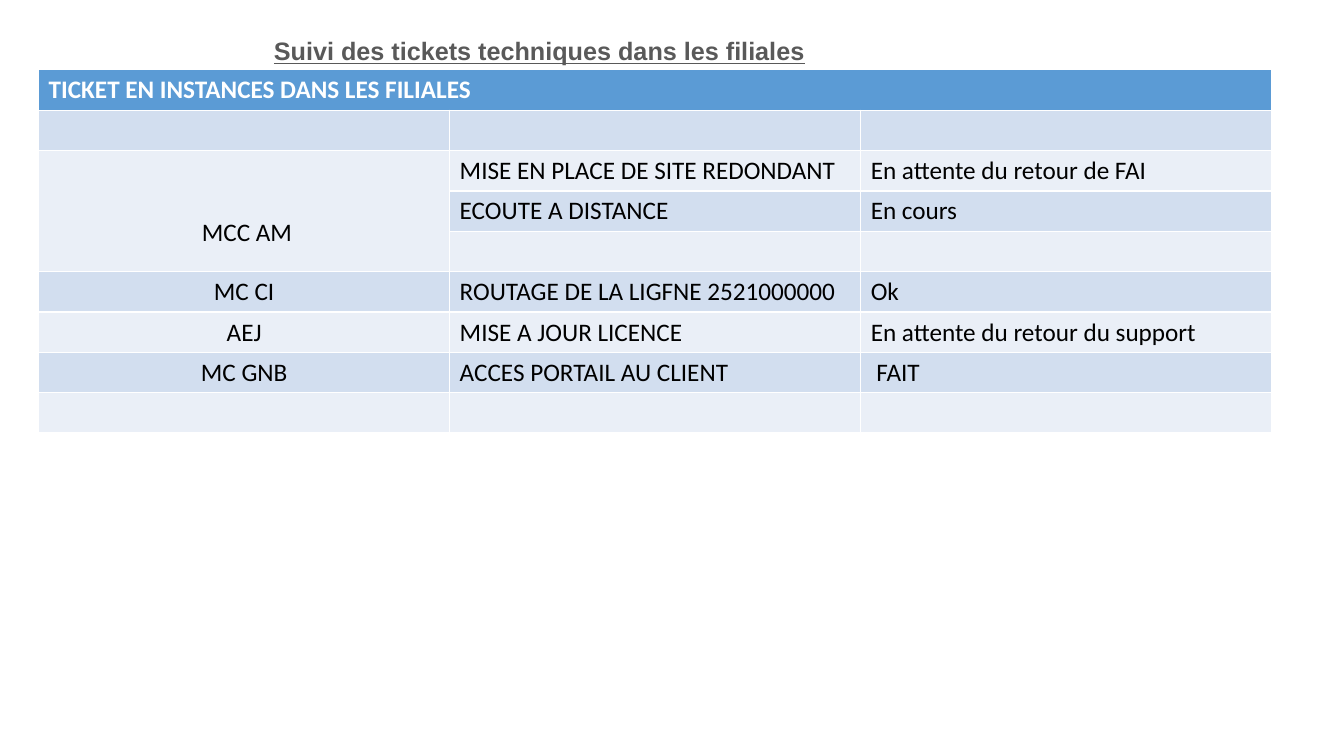
from pptx import Presentation
from pptx.dml.color import RGBColor
from pptx.enum.text import MSO_ANCHOR, PP_ALIGN
from pptx.util import Pt

CENTER, LEFT, JUSTIFY = PP_ALIGN.CENTER, PP_ALIGN.LEFT, PP_ALIGN.JUSTIFY
MIDDLE, BOTTOM = MSO_ANCHOR.MIDDLE, MSO_ANCHOR.BOTTOM

THEME = {
    "title": RGBColor.from_string("595959"),
    "header": RGBColor.from_string("5B9BD5"),
    "bands": [RGBColor.from_string("EAEFF7"), RGBColor.from_string("D2DEEF")],
    "white": RGBColor.from_string("FFFFFF"),
    "black": RGBColor.from_string("000000"),
    "size": Pt(18),
    "title_font": "Arial",
    "table_font": "Calibri",
}

TICKETS = [
    ("TICKET EN INSTANCES DANS LES FILIALES", "", ""),
    ("", "", ""),
    ("MCC AM", "MISE EN PLACE DE SITE REDONDANT", "En attente du retour de FAI"),
    ("", "ECOUTE A DISTANCE", "En cours"),
    ("", "", ""),
    ("MC CI", "ROUTAGE DE LA LIGFNE 2521000000", "Ok"),
    ("AEJ", "MISE A JOUR LICENCE", "En attente du retour du support"),
    ("MC GNB", "ACCES PORTAIL AU CLIENT", "FAIT"),
    ("", "", ""),
]
ROW_HEIGHT = 28.8
COLUMN_WIDTH = 293.6


def style(p, font, color, bold, align):
    p.alignment = align
    p.font.name = font
    p.font.size = THEME["size"]
    p.font.bold = bold
    p.font.color.rgb = color


prs = Presentation()
prs.slide_width, prs.slide_height = Pt(960), Pt(540)
s = prs.slides.add_slide(prs.slide_layouts[6])

title = s.shapes.add_textbox(Pt(188.6), Pt(21.8), Pt(397.4), Pt(29))
tf = title.text_frame
tf.word_wrap = False
tf.vertical_anchor = MIDDLE
p = tf.paragraphs[0]
p.text = "Suivi des tickets techniques dans les filiales"
style(p, THEME["title_font"], THEME["title"], True, JUSTIFY)
p.font.underline = True

table = s.shapes.add_table(
    len(TICKETS), 3, Pt(27.6), Pt(49.9),
    Pt(3 * COLUMN_WIDTH), Pt(len(TICKETS) * ROW_HEIGHT),
).table
for column in table.columns:
    column.width = Pt(COLUMN_WIDTH)

for i, ticket in enumerate(TICKETS):
    table.rows[i].height = Pt(ROW_HEIGHT)
    header = i == 0
    for j, text in enumerate(ticket):
        cell = table.cell(i, j)
        cell.fill.solid()
        cell.fill.fore_color.rgb = THEME["header"] if header else THEME["bands"][i % 2]
        p = cell.text_frame.paragraphs[0]
        p.text = text
        style(p, THEME["table_font"], THEME["white"] if header else THEME["black"],
              header, CENTER if j == 0 and not header else LEFT)

table.cell(0, 0).merge(table.cell(0, 2))
branch = table.cell(2, 0)
branch.merge(table.cell(4, 0))
branch.vertical_anchor = BOTTOM
branch.margin_bottom = Pt(16.5)
for cell in (branch, table.cell(7, 2)):
    cell.margin_left = Pt(11.2)

prs.save("out.pptx")
